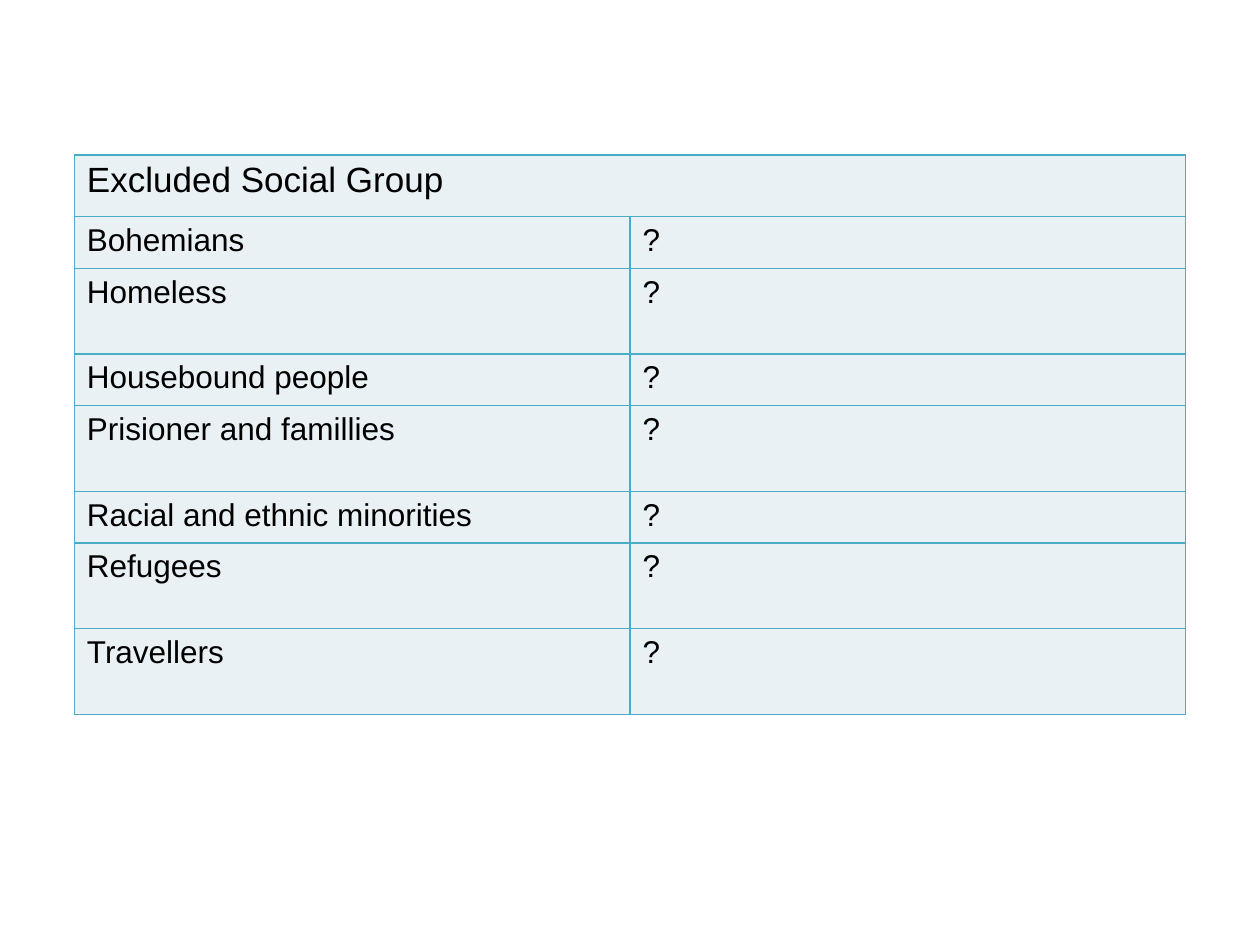
"""Build a slide with a table of excluded social groups."""
from dataclasses import dataclass

from lxml.etree import SubElement
from pptx import Presentation
from pptx.dml.color import RGBColor
from pptx.oxml.ns import qn
from pptx.table import _Cell as Cell
from pptx.util import Inches, Pt

LEFT, TOP, COLUMN_WIDTH = 0.59, 1.23, 4.41
HEADER, SHORT, TALL = 0.49, 0.41, 0.68
BORDER, FILL, INK = "4BACC6", "E9F1F5", "000000"


@dataclass
class Row:
    texts: tuple[str, ...]
    height: float
    size: int = 18


ROWS = [Row(("Excluded Social Group", ""), HEADER, 20)] + [
    Row((group, "?"), height)
    for group, height in (
        ("Bohemians", SHORT),
        ("Homeless", TALL),
        ("Housebound people", SHORT),
        ("Prisioner and famillies", TALL),
        ("Racial and ethnic minorities", SHORT),
        ("Refugees", TALL),
        ("Travellers", TALL),
    )
]


def color(value: str) -> RGBColor:
    return RGBColor.from_string(value)


def draw_borders(cell: Cell) -> None:
    properties = cell._tc.get_or_add_tcPr()
    for side in ("L", "R", "T", "B"):
        line = SubElement(properties, qn(f"a:ln{side}"), w=str(Pt(1)))
        SubElement(SubElement(line, qn("a:solidFill")), qn("a:srgbClr"), val=BORDER)


def draw_cell(cell: Cell, text: str, size: int) -> None:
    draw_borders(cell)
    cell.fill.solid()
    cell.fill.fore_color.rgb = color(FILL)
    para = cell.text_frame.paragraphs[0]
    para.font.size = Pt(size)
    if text:
        span = para.add_run()
        span.text = text
        for name, value in {"name": "Arial", "size": Pt(size), "bold": False}.items():
            setattr(span.font, name, value)
        span.font.color.rgb = color(INK)


def main() -> None:
    deck = Presentation()
    deck.slide_width, deck.slide_height = Inches(10), Inches(7.5)
    page = deck.slides.add_slide(deck.slide_layouts[6])
    table = page.shapes.add_table(
        len(ROWS), 2, Inches(LEFT), Inches(TOP), Inches(2 * COLUMN_WIDTH),
        Inches(sum(row.height for row in ROWS)),
    ).table
    table.first_row = table.horz_banding = False
    for column in table.columns:
        column.width = Inches(COLUMN_WIDTH)
    for index, row in enumerate(ROWS):
        table.rows[index].height = Inches(row.height)
        for cell, text in zip(table.rows[index].cells, row.texts):
            draw_cell(cell, text, row.size)
    table.cell(0, 0).merge(table.cell(0, 1))
    deck.save("out.pptx")


if __name__ == "__main__":
    main()
